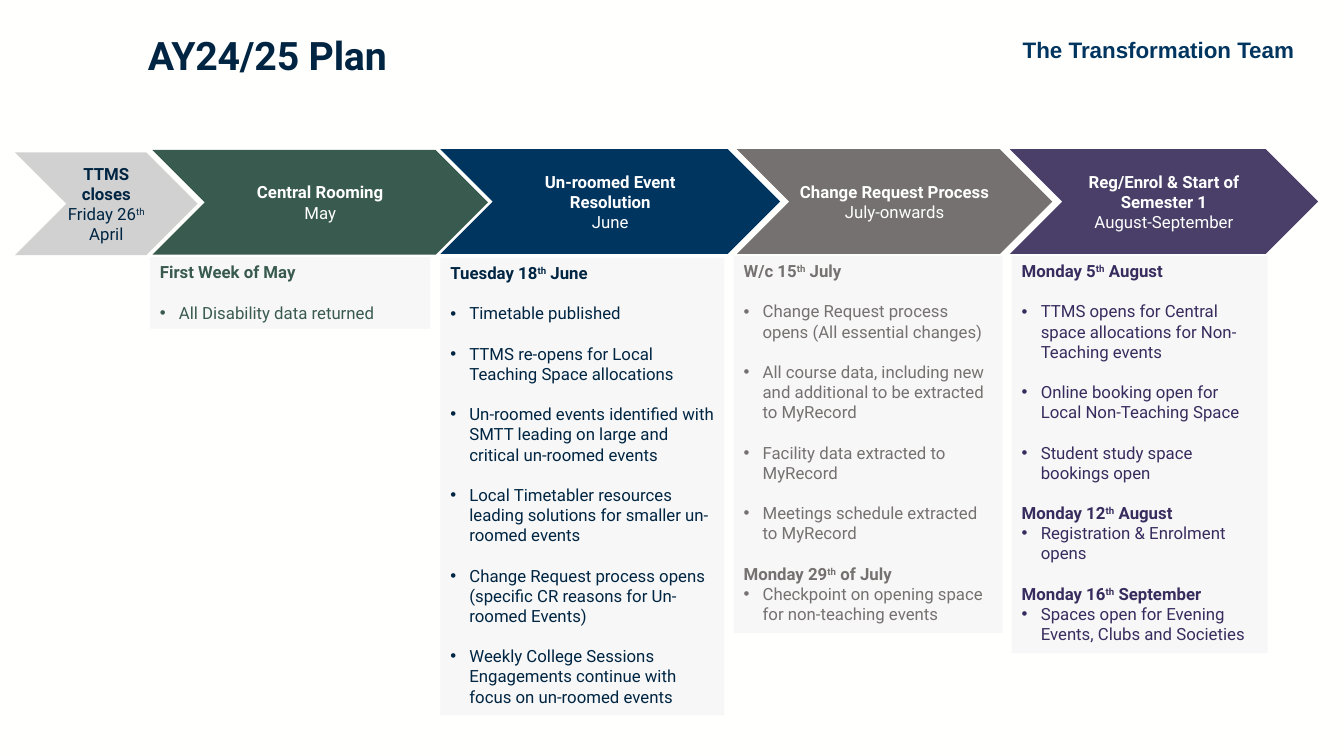
from lxml import etree
from pptx import Presentation
from pptx.dml.color import RGBColor
from pptx.enum import shapes, text
from pptx.oxml import ns
from pptx.util import Cm, Pt

# Places are left, top, width, height in cm; ^ marks superscript.
TITLE = ("AY24/25 Plan", (3.48, 0.79, 18.39, 3.05))
TEAM = ("The Transformation Team", (25.27, 0.79, 7.85, 0.94))
NAVY, WHITE, PANEL = "002542", "FFFFFF", "F7F7F7"

STAGES = [
    dict(name="TTMS closes", date="Friday 26^th^ April", arrow=(0.38, 3.84, 4.6, 2.59),
         fill="D1D1D1", label=NAVY, inset=0),
    dict(name="Central Rooming", date="May", arrow=(3.84, 3.78, 8.46, 2.64),
         fill="395A4F", ink="395A4F", panel=(3.78, 6.48, 7.06, 1.8),
         sections=[("First Week of May", ["All Disability data returned"])]),
    dict(name="Un-roomed Event Resolution", date="June", arrow=(11.1, 3.76, 8.56, 2.64),
         fill="003560", ink=NAVY, panel=(11.1, 6.5, 7.16, 11.53),
         sections=[("Tuesday 18^th^ June", [
             "Timetable published",
             "TTMS re-opens for Local Teaching Space allocations",
             "Un-roomed events identified with SMTT leading on large and critical un-roomed events",
             "Local Timetabler resources leading solutions for smaller un-roomed events",
             "Change Request process opens (specific CR reasons for Un-roomed Events)",
             "Weekly College Sessions Engagements continue with focus on un-roomed events"])]),
    dict(name="Change Request Process", date="July-onwards", arrow=(18.57, 3.76, 7.95, 2.64),
         fill="767171", ink="767171", panel=(18.49, 6.45, 6.78, 9.5),
         sections=[("W/c 15^th^ July", [
             "Change Request process opens (All essential changes)",
             "All course data, including new and additional to be extracted to MyRecord",
             "Facility data extracted to MyRecord",
             "Meetings schedule extracted to MyRecord"]),
             ("Monday 29^th^ of July", ["Checkpoint on opening space for non-teaching events"])]),
    dict(name="Reg/Enrol & Start of Semester 1", date="August-September",
         arrow=(25.45, 3.76, 7.77, 2.64),
         fill="4A3F68", ink="382C5E", panel=(25.5, 6.45, 6.45, 10.01),
         sections=[("Monday 5^th^ August", [
             "TTMS opens for Central space allocations for Non-Teaching events",
             "Online booking open for Local Non-Teaching Space",
             "Student study space bookings open"]),
             ("Monday 12^th^ August", ["Registration & Enrolment opens"]),
             ("Monday 16^th^ September", ["Spaces open for Evening Events, Clubs and Societies"])]),
]
LINE_GAP = 14.4
INDENT = Cm(0.48)


def color(hex_text):
    return RGBColor.from_string(hex_text)


def write(frame, words, ink, size=12, font="Roboto", bold=False, align=text.PP_ALIGN.LEFT,
          gap=0, bullet=False, line=None, tracking=None):
    """Add one paragraph, reusing the empty first one of a new frame."""
    paragraph = frame.paragraphs[0]
    if paragraph.runs:
        paragraph = frame.add_paragraph()
    if bullet:
        props = paragraph._p.get_or_add_pPr()
        props.set("marL", str(INDENT))
        props.set("indent", str(-INDENT))
        etree.SubElement(props, ns.qn("a:buFont")).set("typeface", "Arial")
        etree.SubElement(props, ns.qn("a:buChar")).set("char", "•")
    paragraph.alignment = align
    paragraph.space_before = Pt(gap)
    if line:
        paragraph.line_spacing = line
    for index, piece in enumerate(words.split("^")):
        run = paragraph.add_run()
        run.text = piece
        run.font.name, run.font.size, run.font.bold = font, Pt(size), bold
        run.font.color.rgb = color(ink)
        if index % 2:
            run._r.get_or_add_rPr().set("baseline", "30000")
        if tracking:
            run._r.get_or_add_rPr().set("spc", str(tracking))


def add_block(slide, kind, place, fill, anchor):
    block = slide.shapes.add_shape(kind, *map(Cm, place))
    block.shadow.inherit = False
    block.fill.solid()
    block.fill.fore_color.rgb = color(fill)
    block.line.fill.background()
    block.text_frame.word_wrap = True
    block.text_frame.vertical_anchor = anchor
    return block.text_frame


def add_heading(slide, heading, **style):
    words, place = heading
    frame = slide.shapes.add_textbox(*map(Cm, place)).text_frame
    frame.word_wrap = True
    write(frame, words, bold=True, **style)


def add_arrow(slide, stage):
    frame = add_block(slide, shapes.MSO_SHAPE.CHEVRON, stage["arrow"], stage["fill"],
                      text.MSO_ANCHOR.MIDDLE)
    if "inset" in stage:
        inset = Cm(stage["inset"])
        frame.margin_left = frame.margin_right = inset
        frame.margin_top = frame.margin_bottom = inset
    ink = stage.get("label", WHITE)
    write(frame, stage["name"], ink, bold=True, align=text.PP_ALIGN.CENTER)
    write(frame, stage["date"], ink, align=text.PP_ALIGN.CENTER)


def add_panel(slide, stage):
    frame = add_block(slide, shapes.MSO_SHAPE.RECTANGLE, stage["panel"], PANEL,
                      text.MSO_ANCHOR.TOP)
    for index, (day, tasks) in enumerate(stage["sections"]):
        write(frame, day, stage["ink"], bold=True, gap=LINE_GAP if index else 0)
        for task in tasks:
            write(frame, task, stage["ink"], bullet=True, gap=0 if index else LINE_GAP)


def main():
    deck = Presentation()
    deck.slide_width, deck.slide_height = Cm(33.87), Cm(19.05)
    slide = deck.slides.add_slide(deck.slide_layouts[6])
    slide.background.fill.solid()
    slide.background.fill.fore_color.rgb = color("FFFFFE")
    add_heading(slide, TEAM, ink="00355F", size=16, font="Arial", align=text.PP_ALIGN.CENTER)
    add_heading(slide, TITLE, ink=NAVY, size=28, line=0.9, tracking=-10)
    for stage in STAGES:
        add_arrow(slide, stage)
        if "panel" in stage:
            add_panel(slide, stage)
    deck.save("out.pptx")


if __name__ == "__main__":
    main()
